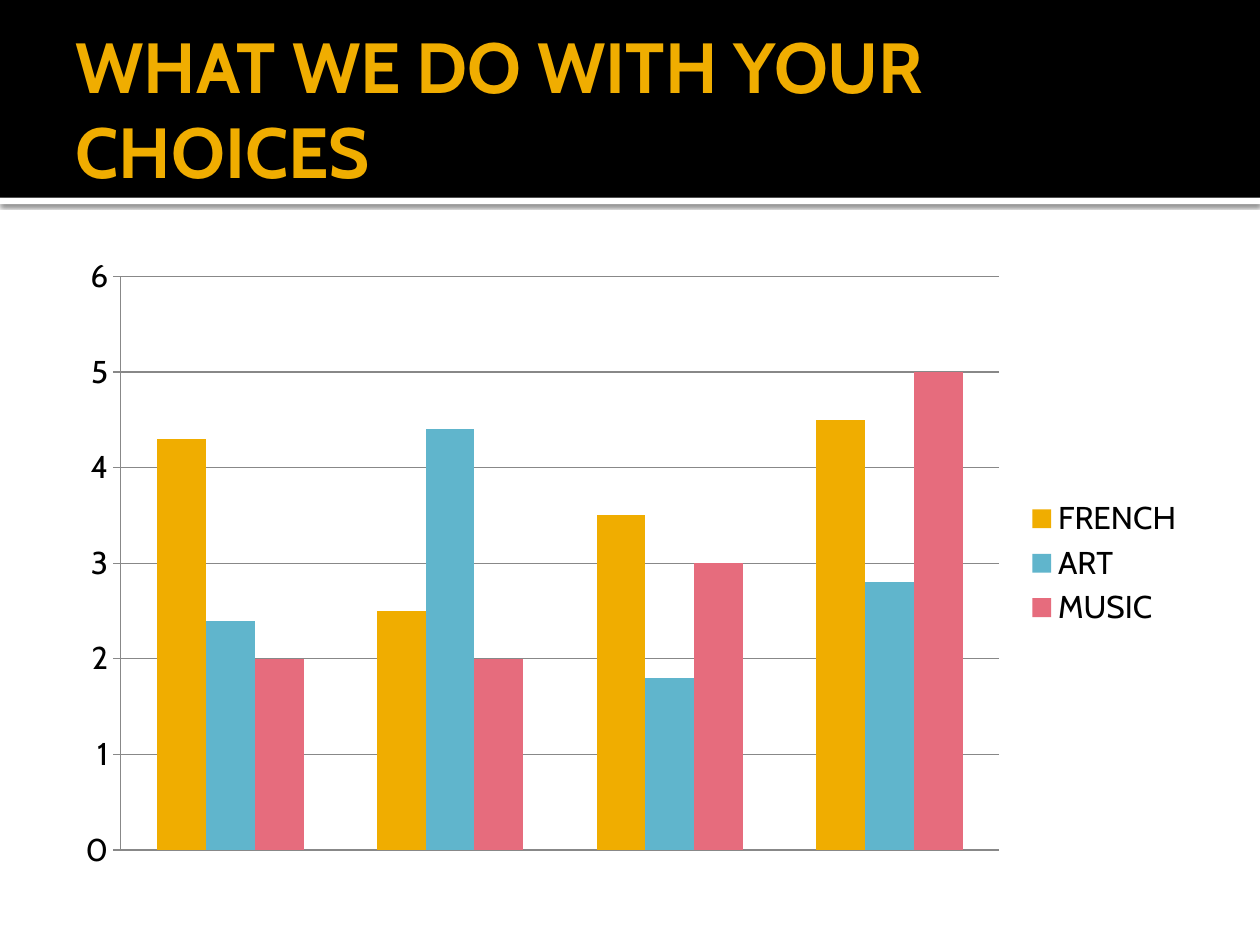
"""Build a title slide section with a clustered column chart of subject choices."""
from dataclasses import dataclass

from lxml import etree
from pptx import Presentation
from pptx.chart.data import CategoryChartData
from pptx.dml.color import RGBColor
from pptx.enum.chart import XL_CHART_TYPE, XL_LEGEND_POSITION, XL_TICK_MARK
from pptx.enum.shapes import MSO_SHAPE
from pptx.enum.text import MSO_ANCHOR, MSO_AUTO_SIZE, PP_ALIGN
from pptx.oxml import parse_xml
from pptx.util import Inches, Pt

RECTANGLE = MSO_SHAPE.RECTANGLE
MIDDLE = MSO_ANCHOR.MIDDLE
NO_AUTOFIT = MSO_AUTO_SIZE.NONE
LEFT = PP_ALIGN.LEFT
CLUSTERED = XL_CHART_TYPE.COLUMN_CLUSTERED
LEGEND_RIGHT = XL_LEGEND_POSITION.RIGHT
CROSS = XL_TICK_MARK.CROSS
DRAWING_NS = "http://schemas.openxmlformats.org/drawingml/2006/main"


@dataclass(frozen=True)
class Theme:
    font: str = "Cabin"
    title_size: float = 40.5
    chart_size: float = 18
    black: RGBColor = RGBColor(0x00, 0x00, 0x00)
    white: RGBColor = RGBColor(0xFF, 0xFF, 0xFF)
    grid: RGBColor = RGBColor(0x88, 0x88, 0x88)
    gold: RGBColor = RGBColor(0xF0, 0xAD, 0x00)
    blue: RGBColor = RGBColor(0x60, 0xB5, 0xCC)
    pink: RGBColor = RGBColor(0xE6, 0x6C, 0x7D)


theme = Theme()
prs = Presentation()
prs.slide_width, prs.slide_height = Inches(10), Inches(7.5)
slide = prs.slides.add_slide(prs.slide_layouts[5])


def add_band(top, height, color):
    band = slide.shapes.add_shape(RECTANGLE, 0, Inches(top), prs.slide_width, Inches(height))
    band.shadow.inherit = False
    band.fill.solid()
    band.fill.fore_color.rgb = color
    band.line.fill.background()
    return band


title = slide.shapes.title
rule = add_band(1.57, 0.05, theme.white)
header = add_band(0, 1.57, theme.black)
slide.shapes._spTree.remove(title._element)
slide.shapes._spTree.append(title._element)

rule_effects = rule._element.spPr.find(f"{{{DRAWING_NS}}}effectLst")
rule_effects.append(parse_xml(
    f'<a:outerShdw xmlns:a="{DRAWING_NS}" blurRad="{Pt(2.5)}" dist="{Pt(0.8)}" '
    'dir="5400000" algn="t" rotWithShape="0">'
    f'<a:srgbClr val="{theme.black}"><a:alpha val="60000"/></a:srgbClr></a:outerShdw>'))

title.left, title.top = Inches(0.5), Inches(0.17)
title.width, title.height = Inches(9), Inches(1.37)
title_frame = title.text_frame
title_frame.text = "WHAT WE DO WITH YOUR CHOICES"
title_frame.word_wrap = True
title_frame.auto_size = NO_AUTOFIT
title_frame.vertical_anchor = MIDDLE
title_frame.margin_left = Inches(0.1)
title_frame.margin_right = title_frame.margin_top = title_frame.margin_bottom = Inches(0.05)
title_frame.paragraphs[0].alignment = LEFT
title_font = title_frame.paragraphs[0].runs[0].font
title_font.name = theme.font
title_font.size = Pt(theme.title_size)
title_font.bold = True
title_font.color.rgb = theme.gold

subjects = [
    ("FRENCH", (4.3, 2.5, 3.5, 4.5), theme.gold),
    ("ART", (2.4, 4.4, 1.8, 2.8), theme.blue),
    ("MUSIC", (2, 2, 3, 5), theme.pink),
]
choices = CategoryChartData()
choices.categories = ["1", "2", "3", "4"]
for subject, values, _ in subjects:
    choices.add_series(subject, values)

chart = slide.shapes.add_chart(
    CLUSTERED, Inches(0.5), Inches(1.94), Inches(9), Inches(5.06), choices).chart
chart.has_title = False
chart.font.name = theme.font
chart.font.size = Pt(theme.chart_size)
chart.font.color.rgb = theme.black
chart.has_legend = True
chart.legend.position = LEGEND_RIGHT
chart.legend.include_in_layout = False
chart.category_axis.visible = False

value_axis = chart.value_axis
value_axis.minimum_scale, value_axis.maximum_scale, value_axis.major_unit = 0, 6, 1
value_axis.major_tick_mark = CROSS
value_axis.has_major_gridlines = True
for line in (value_axis.format.line, value_axis.major_gridlines.format.line):
    line.color.rgb = theme.grid
    line.width = Pt(0.75)

columns = chart.plots[0]
columns.gap_width, columns.overlap = 150, 0
columns.vary_by_categories = False
for series, (_, _, color) in zip(columns.series, subjects):
    series.format.fill.solid()
    series.format.fill.fore_color.rgb = color
    series.invert_if_negative = False

prs.save("out.pptx")
